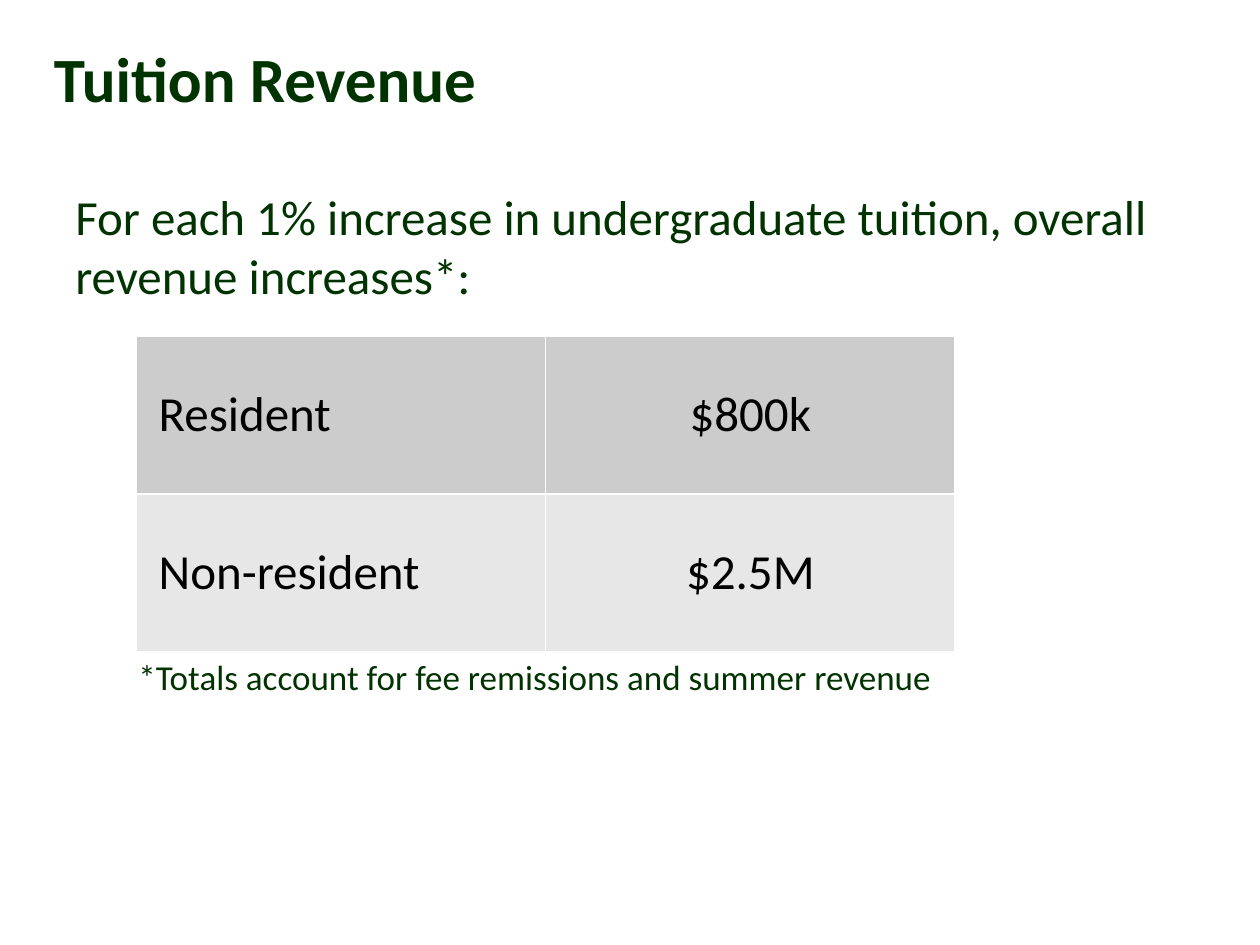
from pptx import Presentation, util as u
from pptx.dml.color import RGBColor
from pptx.enum import text

WIDE, HIGH = 10, 7.5
HUES = {"green": "003300", "black": "000000", "dark": "CCCCCC", "light": "E7E7E7"}
ROWS = [("Resident", "$800k", "dark"), ("Non-resident", "$2.5M", "light")]


def style(par, size, hue, bold=False):
    """Set the font of every run in a paragraph."""
    for run in par.runs:
        font = run.font
        font.name, font.size, font.bold = "Calibri", u.Pt(size), bold
        font.color.rgb = RGBColor.from_string(HUES[hue])


def place(left, top, width, height):
    """Turn shares of the slide into lengths."""
    return [u.Inches(round(share * side, 2)) for share, side in
            zip((left, top, width, height), (WIDE, HIGH) * 2)]


def label(slide, words, spot, size, bold=False, anchor=text.MSO_ANCHOR.TOP):
    """Add a wrapped green text box."""
    frame = slide.shapes.add_textbox(*place(*spot)).text_frame
    frame.word_wrap = True
    frame.vertical_anchor = anchor
    frame.text = words
    style(frame.paragraphs[0], size, "green", bold)


def fill(cell, words, hue, align):
    """Write and colour one table cell."""
    cell.fill.solid()
    cell.fill.fore_color.rgb = RGBColor.from_string(HUES[hue])
    cell.vertical_anchor = text.MSO_ANCHOR.MIDDLE
    cell.text_frame.text = words
    par = cell.text_frame.paragraphs[0]
    par.alignment = align
    style(par, 28, "black")


def grid(slide, spot):
    """Add the table of revenue by type of student."""
    table = slide.shapes.add_table(len(ROWS), 2, *place(*spot)).table
    table.first_row = False
    for row, (name, sum_, hue) in enumerate(ROWS):
        fill(table.cell(row, 0), name, hue, text.PP_ALIGN.LEFT)
        table.cell(row, 0).margin_left = u.Inches(0.18)
        fill(table.cell(row, 1), sum_, hue, text.PP_ALIGN.CENTER)


def main():
    """Build the slide and save it."""
    deck = Presentation()
    deck.slide_width, deck.slide_height = u.Inches(WIDE), u.Inches(HIGH)
    slide = deck.slides.add_slide(deck.slide_layouts[6])
    label(slide, "For each 1% increase in undergraduate tuition, overall revenue increases*:",
          (0.05, 0.19, 0.9, 0.14), 28)
    label(slide, "*Totals account for fee remissions and summer revenue",
          (0.1, 0.686, 0.85, 0.06), 20)
    label(slide, "Tuition Revenue", (0.033, 0, 0.942, 0.163), 36, True,
          text.MSO_ANCHOR.MIDDLE)
    grid(slide, (0.108, 0.356, 0.65, 1 / 3))
    deck.save("out.pptx")


if __name__ == "__main__":
    main()
